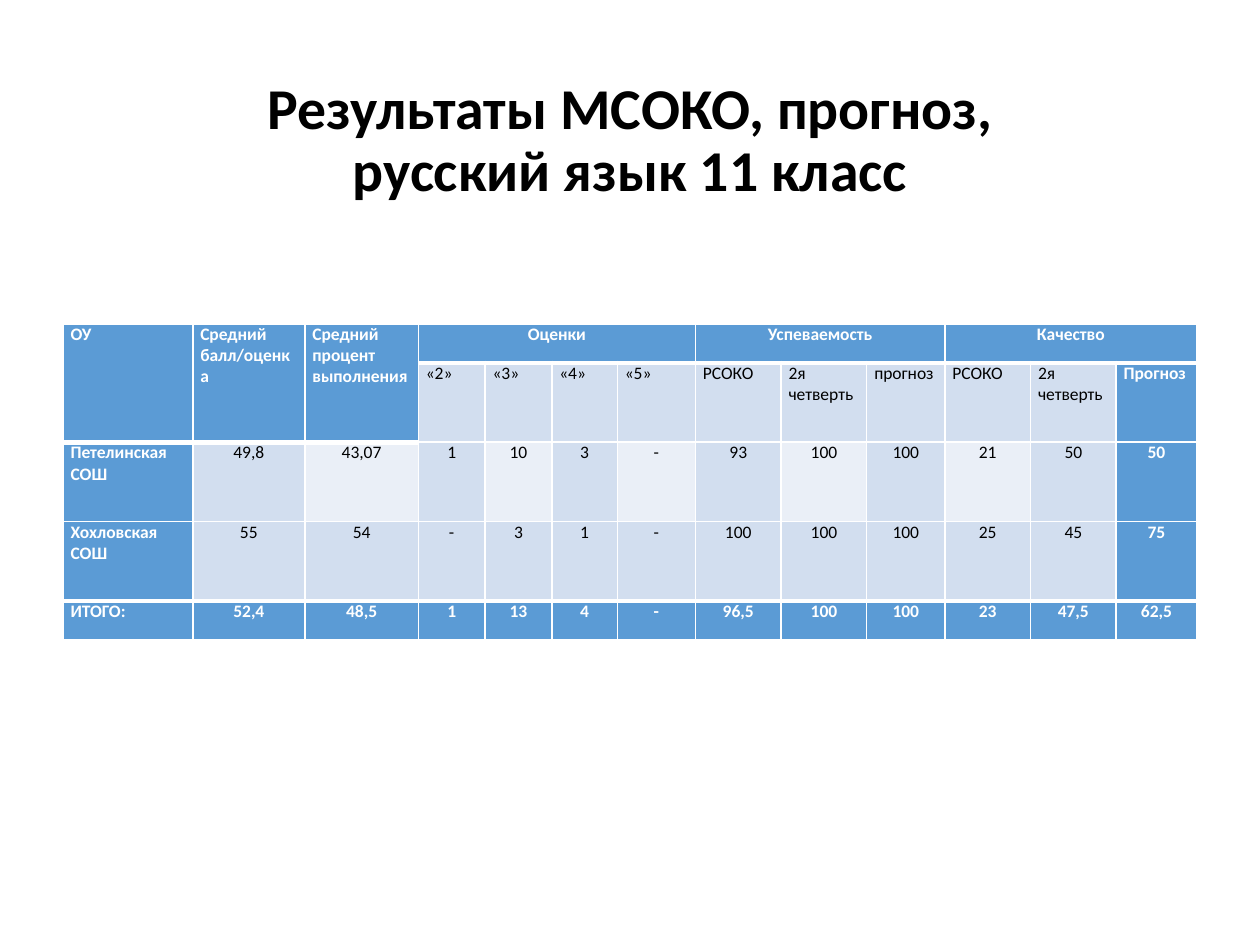
from lxml import etree
from pptx import Presentation
from pptx import util as u
from pptx.dml.color import RGBColor
from pptx.enum import text
from pptx.oxml import ns

COLORS = {
    "text": "000000",
    "white": "FFFFFF",
    "accent": "5B9BD5",
    "band": "D2DEEF",
    "light": "EAEFF7",
}
COLUMN_WIDTHS = [1.03, 0.89, 0.9, 0.53, 0.53, 0.52, 0.62,
                 0.68, 0.68, 0.62, 0.68, 0.68, 0.64]
ROW_HEIGHTS = [0.31, 0.63, 0.63, 0.63, 0.31]
RESULTS = [
    ["ОУ", "Средний балл/оценка", "Средний процент выполнения", "Оценки", "", "", "",
     "Успеваемость", "", "", "Качество", "", ""],
    ["", "", "", "«2»", "«3»", "«4»", "«5»", "РСОКО", "2я четверть", "прогноз",
     "РСОКО", "2я четверть", "Прогноз"],
    ["Петелинская СОШ", "49,8", "43,07", "1", "10", "3", "-",
     "93", "100", "100", "21", "50", "50"],
    ["Хохловская СОШ", "55", "54", "-", "3", "1", "-",
     "100", "100", "100", "25", "45", "75"],
    ["ИТОГО:", "52,4", "48,5", "1", "13", "4", "-",
     "96,5", "100", "100", "23", "47,5", "62,5"],
]
MERGES = [((0, col), (1, col)) for col in range(3)]
MERGES += [((0, 3), (0, 6)), ((0, 7), (0, 9)), ((0, 10), (0, 12))]
BANDED_ROW = 2
TOTAL_ROW = len(RESULTS) - 1
FORECAST_COLUMN = len(COLUMN_WIDTHS) - 1
TALL_HEADERS = 3


def cell_color(row, col):
    emphasized = (row in (0, TOTAL_ROW) or col in (0, FORECAST_COLUMN)
                  or (row == 1 and col < TALL_HEADERS))
    if emphasized:
        return "accent"
    return "light" if row == BANDED_ROW and col % 2 == 0 else "band"


def top_border(row, col):
    """Points: thick under the header cells and above the totals."""
    thick = row in (1, TOTAL_ROW) or (row == 2 and col < TALL_HEADERS)
    return 3 if thick else 1


def is_centered(row, col):
    if row == 0:
        return col >= TALL_HEADERS
    return row > 1 and col > 0


class SlideBuilder:
    font_name = "Calibri"
    title_size = 33
    table_size = 10

    def __init__(self, slide):
        self.slide = slide

    def style(self, paragraph, size, color, bold, centered):
        paragraph.alignment = (text.PP_ALIGN.CENTER if centered
                               else text.PP_ALIGN.LEFT)
        for run in paragraph.runs:
            run.font.name = self.font_name
            run.font.size = u.Pt(size)
            run.font.bold = bold
            run.font.color.rgb = RGBColor.from_string(COLORS[color])

    def title(self, wording, left, top, width, height):
        frame = self.slide.shapes.add_textbox(
            u.Inches(left), u.Inches(top), u.Inches(width), u.Inches(height)).text_frame
        frame.word_wrap = True
        frame.vertical_anchor = text.MSO_ANCHOR.MIDDLE
        heading = frame.paragraphs[0]
        heading.text = wording
        heading.line_spacing = 0.9
        self.style(heading, self.title_size, "text", True, True)

    def borders(self, cell, **widths):
        """Draw white edges; widths are points keyed by L, R, T and B."""
        properties = cell._tc.get_or_add_tcPr()
        for side, width in widths.items():
            line = etree.SubElement(properties, ns.qn(f"a:ln{side}"),
                                    w=str(u.Pt(width)))
            fill = etree.SubElement(line, ns.qn("a:solidFill"))
            etree.SubElement(fill, ns.qn("a:srgbClr"), val=COLORS["white"])

    def cell(self, cell, wording, row, col):
        color = cell_color(row, col)
        cell.margin_left = cell.margin_right = u.Inches(0.06)
        cell.margin_top = cell.margin_bottom = 0
        self.borders(cell, L=1, R=1, T=top_border(row, col),
                     B=top_border(row + 1, col))
        cell.fill.solid()
        cell.fill.fore_color.rgb = RGBColor.from_string(COLORS[color])
        if wording:
            cell.text_frame.text = wording
            strong = color == "accent"
            self.style(cell.text_frame.paragraphs[0], self.table_size,
                       "white" if strong else "text", strong, is_centered(row, col))

    def table(self, rows, left, top):
        table = self.slide.shapes.add_table(
            len(rows), len(COLUMN_WIDTHS), u.Inches(left), u.Inches(top),
            u.Inches(sum(COLUMN_WIDTHS)), u.Inches(sum(ROW_HEIGHTS))).table
        for column, width in zip(table.columns, COLUMN_WIDTHS):
            column.width = u.Inches(width)
        for table_row, height in zip(table.rows, ROW_HEIGHTS):
            table_row.height = u.Inches(height)
        for first, last in MERGES:
            table.cell(*first).merge(table.cell(*last))
        for row, wordings in enumerate(rows):
            for col, wording in enumerate(wordings):
                self.cell(table.cell(row, col), wording, row, col)


def main():
    presentation = Presentation()
    presentation.slide_width = u.Inches(10)
    presentation.slide_height = u.Inches(7.5)
    blank_layout = presentation.slide_layouts[6]
    builder = SlideBuilder(presentation.slides.add_slide(blank_layout))
    builder.title("Результаты МСОКО, прогноз,\vрусский язык 11 класс",
                  0.69, 0.4, 8.62, 1.45)
    builder.table(RESULTS, 0.5, 2.57)
    presentation.save("out.pptx")


if __name__ == "__main__":
    main()
